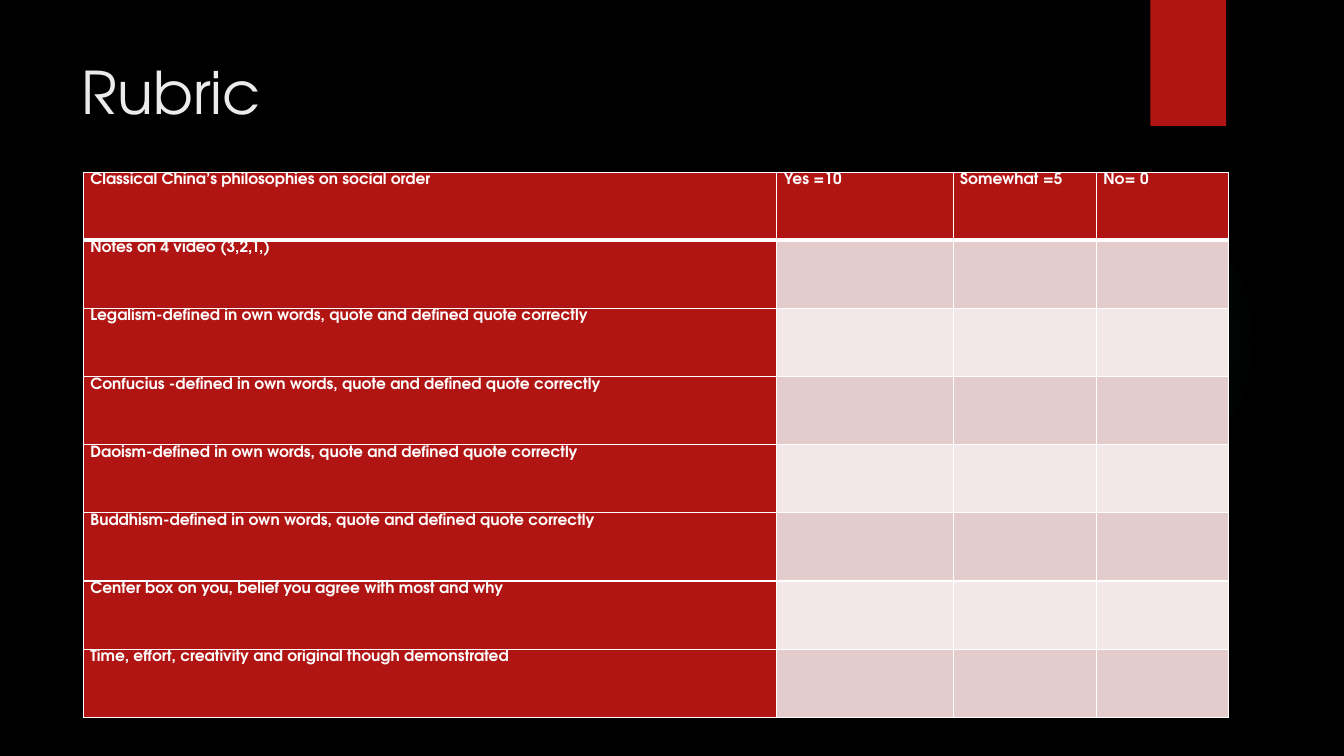
from pptx import Presentation
from pptx.dml.color import RGBColor
from pptx.enum.shapes import MSO_SHAPE as Shape
from pptx.enum.text import MSO_ANCHOR as Anchor
from pptx.oxml import parse_xml
from pptx.oxml.ns import nsdecls
from pptx.util import Pt

BLACK = RGBColor(0x00, 0x00, 0x00)
WHITE = RGBColor(0xFF, 0xFF, 0xFF)
PALE = RGBColor(0xEB, 0xEB, 0xEB)
RED = RGBColor(0xB0, 0x15, 0x13)
PINK = RGBColor(0xE4, 0xCC, 0xCC)
BLUSH = RGBColor(0xF2, 0xE8, 0xE7)
TEAL = RGBColor(0x50, 0xB9, 0xC1)
FACE = "TeX Gyre Adventor"
TITLE = {"name": FACE, "size": Pt(42)}
LABEL = {"name": FACE, "size": Pt(11), "bold": True}

HEADS = ["Classical China’s philosophies on social order",
         "Yes =10", "Somewhat =5", "No= 0"]
BELIEFS = ["Legalism-", "Confucius -", "Daoism-", "Buddhism-"]
GOALS = ["Notes on 4 video (3,2,1,)",
         *[f"{name}defined in own words, quote and defined quote correctly"
           for name in BELIEFS],
         "Center box on you, belief you agree with most and why",
         "Time, effort, creativity and original though demonstrated"]
WIDTHS = [495.36, 126, 102.24, 94.32]
HIGH = 48.69


def write(frame, text, style, color):
    para = frame.paragraphs[0]
    run = para.add_run()
    run.text = text
    for key, value in style.items():
        setattr(run.font, key, value)
    run.font.color.rgb = color
    return para


def edge(cell, widths):
    """Draw white cell borders; widths are left, right, top, bottom in points."""
    props = cell._tc.get_or_add_tcPr()
    for spot, (side, width) in enumerate(zip("LRTB", widths)):
        props.insert(spot, parse_xml(
            f'<a:ln{side} {nsdecls("a")} w="{Pt(width)}"><a:solidFill>'
            f'<a:srgbClr val="{WHITE}"/></a:solidFill></a:ln{side}>'))


deck = Presentation()
deck.slide_width, deck.slide_height = Pt(960), Pt(540)
slide = deck.slides.add_slide(deck.slide_layouts[6])
slide.background.fill.solid()
slide.background.fill.fore_color.rgb = BLACK
shapes = slide.shapes

# Faint glow behind the table
glow = shapes.add_shape(Shape.OVAL, Pt(677.5), Pt(131.75), Pt(222), Pt(222))
glow.shadow.inherit = False
glow.line.fill.background()
glow.fill.background()
stops = "".join(
    f'<a:gs pos="{at * 1000}"><a:srgbClr val="{TEAL}">'
    f'<a:alpha val="{alpha * 1000}"/></a:srgbClr></a:gs>'
    for at, alpha in [(0, 7), (36, 6), (69, 0)])
blend = parse_xml(
    f'<a:gradFill {nsdecls("a")}><a:gsLst>{stops}</a:gsLst><a:path path="circle">'
    '<a:fillToRect l="50000" t="50000" r="50000" b="50000"/></a:path></a:gradFill>')
props = glow._element.spPr
props.replace(props.find("{*}noFill"), blend)

# Corner tab
tab = shapes.add_shape(Shape.RECTANGLE, Pt(821.75), Pt(0), Pt(54), Pt(90))
tab.shadow.inherit = False
tab.line.fill.background()
tab.fill.solid()
tab.fill.fore_color.rgb = RED

# Title
title = shapes.add_textbox(Pt(51.25), Pt(36), Pt(741), Pt(110)).text_frame
title.word_wrap = True
title.vertical_anchor = Anchor.TOP
write(title, "Rubric", TITLE, PALE)

# Rubric table
rows = [HEADS] + [[goal, "", "", ""] for goal in GOALS]
grid = shapes.add_table(len(rows), len(WIDTHS), Pt(59.5), Pt(123),
                        Pt(sum(WIDTHS)), Pt(HIGH * len(rows))).table
for col, width in zip(grid.columns, WIDTHS):
    col.width = Pt(width)
for r, texts in enumerate(rows):
    grid.rows[r].height = Pt(HIGH)
    for c, text in enumerate(texts):
        cell = grid.cell(r, c)
        cell.fill.solid()
        cell.fill.fore_color.rgb = RED if text else PINK if r % 2 else BLUSH
        edge(cell, (1, 1, 3 if r == 1 else 1, 3 if r == 0 else 1))
        if text:
            cell.margin_left = cell.margin_right = Pt(5.04)
            cell.margin_top = cell.margin_bottom = Pt(0)
            write(cell.text_frame, text, LABEL, WHITE).line_spacing = 1.07

deck.save("out.pptx")
